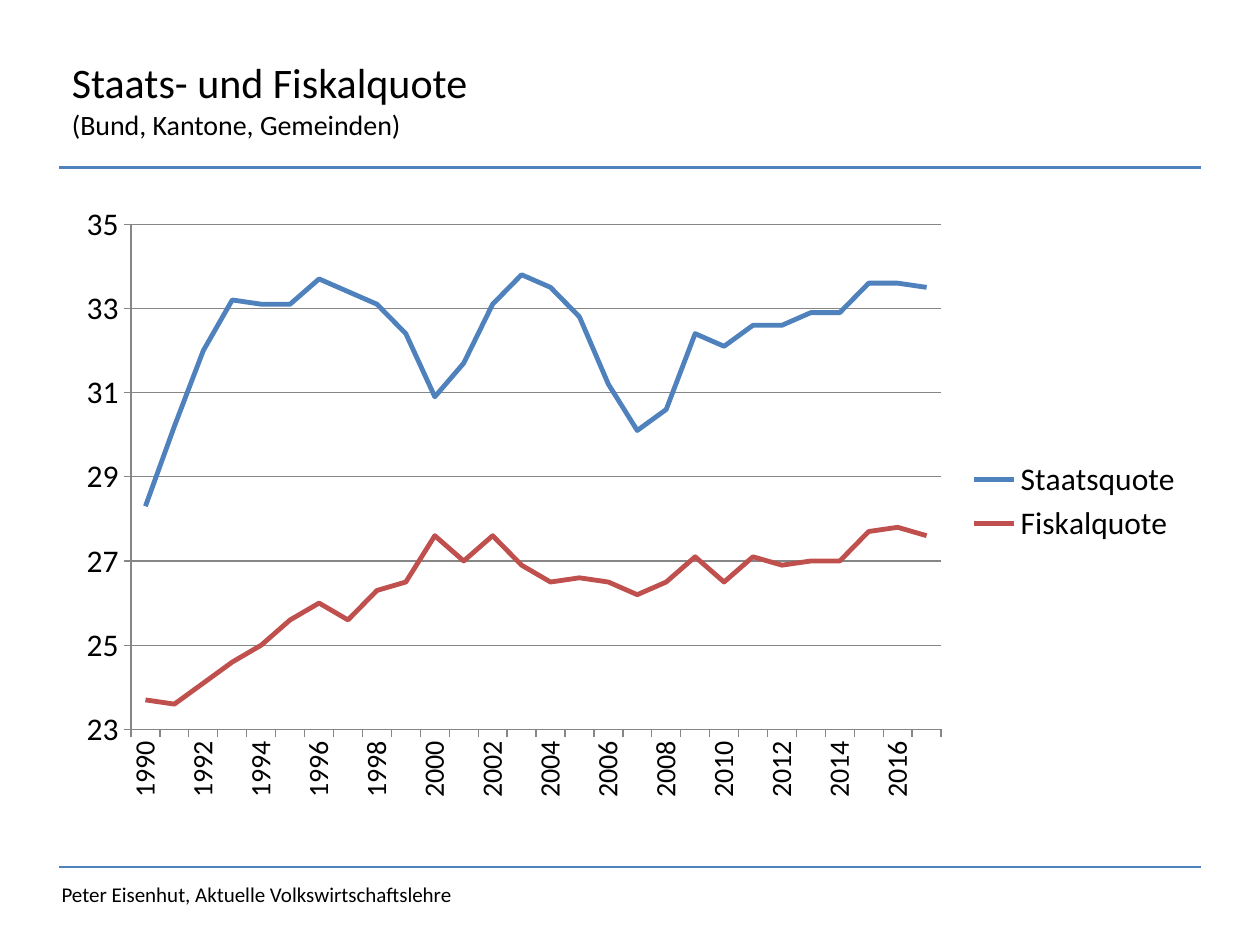
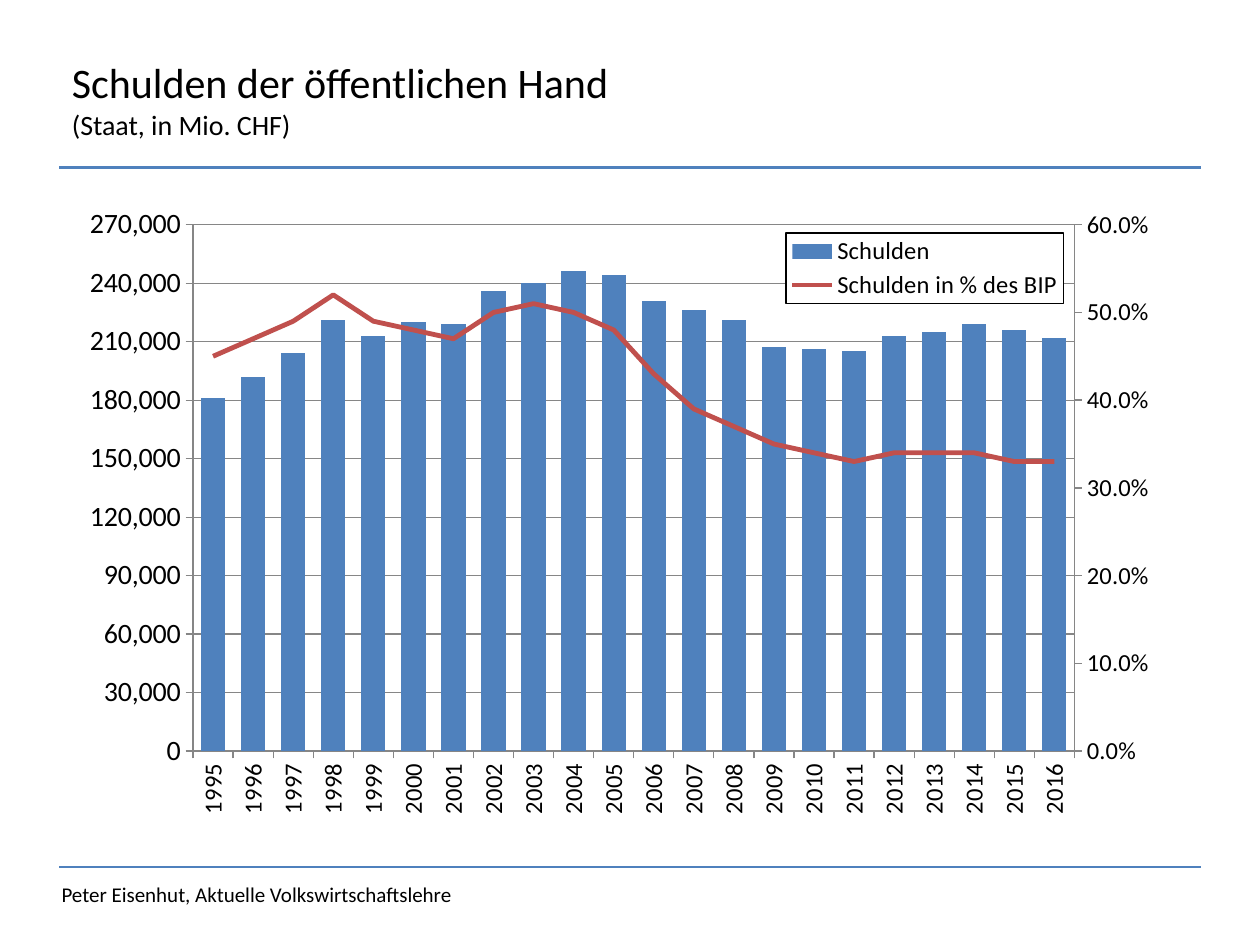
from dataclasses import dataclass
from typing import NamedTuple, Optional

from lxml import etree
from pptx import Presentation
from pptx.chart.axis import ValueAxis
from pptx.chart.data import CategoryChartData
from pptx.dml.color import RGBColor
from pptx.enum.chart import (XL_CHART_TYPE, XL_LEGEND_POSITION, XL_MARKER_STYLE,
                             XL_TICK_LABEL_POSITION, XL_TICK_MARK)
from pptx.enum.shapes import MSO_CONNECTOR
from pptx.enum.text import MSO_ANCHOR, MSO_AUTO_SIZE, PP_ALIGN
from pptx.oxml import parse_xml
from pptx.oxml.ns import nsdecls, qn
from pptx.util import Inches, Pt

LINE, COLUMN = XL_CHART_TYPE.LINE, XL_CHART_TYPE.COLUMN_CLUSTERED
RIGHT = XL_LEGEND_POSITION.RIGHT
NO_MARK = XL_MARKER_STYLE.NONE
LOW = XL_TICK_LABEL_POSITION.LOW
OUT, NO_TICK = XL_TICK_MARK.OUTSIDE, XL_TICK_MARK.NONE
STRAIGHT = MSO_CONNECTOR.STRAIGHT
MIDDLE, NO_FIT, LEFT = MSO_ANCHOR.MIDDLE, MSO_AUTO_SIZE.NONE, PP_ALIGN.LEFT

# The grid: 100 columns by 75 rows of square cells
COLS, ROWS = 100, 75
CELL = Inches(0.1)
TITLE_ONLY = 5


class Box(NamedTuple):
    """Left, top, width and height in grid cells."""
    x: float
    y: float
    w: float
    h: float

    def place(self) -> list[int]:
        return [round(side * CELL) for side in self]

    def share(self, whole: "Box") -> "Box":
        return Box((self.x - whole.x) / whole.w, (self.y - whole.y) / whole.h,
                   self.w / whole.w, self.h / whole.h)


@dataclass(frozen=True)
class Theme:
    font: str = "Calibri"
    ink: RGBColor = RGBColor(0, 0, 0)
    blue: RGBColor = RGBColor(0x4F, 0x81, 0xBD)
    red: RGBColor = RGBColor(0xC0, 0x50, 0x4D)
    grey: RGBColor = RGBColor(0x86, 0x86, 0x86)
    head: float = 24
    sub: float = 16
    foot: float = 12
    label: float = 18
    rule: float = 1.25
    curve: float = 2.75
    hair: float = 0.75


THEME = Theme()

# Frame parts on every slide
FOOTER = "Peter Eisenhut, Aktuelle Volkswirtschaftslehre"
TITLE_BOX = Box(4.7, 1.6, 78.9, 12.5)
FOOT_BOX = Box(3.9, 69.5, 60.2, 3)
RULE_ROWS = (13.3, 68.8)
RULE_EDGE = 4.7


class Scale(NamedTuple):
    """Range, step, number format and type size of a value axis."""
    low: float
    high: float
    step: float
    form: str
    size: float


class Curve(NamedTuple):
    name: str
    values: list[float]
    form: str


@dataclass(frozen=True)
class Page:
    title: str
    sub: str
    kind: int
    box: Box
    plot: Box
    start: int
    curves: list[Curve]
    left: Scale
    years: float
    right: Optional[Scale] = None
    legend: Optional[Box] = None
    key: float = THEME.label


PAGES = [
    Page("Staats- und Fiskalquote", "(Bund, Kantone, Gemeinden)", LINE,
         Box(5.1, 15.3, 89.8, 49), Box(10.4, 17.8, 64.3, 40.1), 1990,
         [Curve("Staatsquote",
                [28.3, 30.2, 32, 33.2, 33.1, 33.1, 33.7, 33.4, 33.1, 32.4,
                 30.9, 31.7, 33.1, 33.8, 33.5, 32.8, 31.2, 30.1, 30.6, 32.4,
                 32.1, 32.6, 32.6, 32.9, 32.9, 33.6, 33.6, 33.5], "0.0"),
          Curve("Fiskalquote",
                [23.7, 23.6, 24.1, 24.6, 25, 25.6, 26, 25.6, 26.3, 26.5,
                 27.6, 27, 27.6, 26.9, 26.5, 26.6, 26.5, 26.2, 26.5, 27.1,
                 26.5, 27.1, 26.9, 27, 27, 27.7, 27.8, 27.6], "0.0")],
         Scale(23, 35, 2, "#,##0", 18), 16),
    Page("Schulden der öffentlichen Hand", "(Staat, in Mio. CHF)", COLUMN,
         Box(5.1, 16.2, 89, 51.2), Box(15.33, 17.84, 69.95, 41.78), 1995,
         [Curve("Schulden",
                [1000 * debt for debt in
                 (181, 192, 204, 221, 213, 220, 219, 236, 240, 246, 244,
                  231, 226, 221, 207, 206, 205, 213, 215, 219, 216, 212)],
                "#,##0"),
          Curve("Schulden in % des BIP",
                [0.45, 0.47, 0.49, 0.52, 0.49, 0.48, 0.47, 0.5, 0.51, 0.5,
                 0.48, 0.43, 0.39, 0.37, 0.35, 0.34, 0.33, 0.34, 0.34, 0.34,
                 0.33, 0.33], "0.0%")],
         Scale(0, 270000, 30000, "#,##0", 16), 14,
         Scale(0, 0.6, 0.1, "0.0%", 14), Box(62.4, 18.5, 22, 5.6), 14),
]


# Text and frame
def style_font(font, size: float) -> None:
    font.name, font.size = THEME.font, Pt(size)
    font.color.rgb = THEME.ink


def add_run(para, text: str, size: float) -> None:
    run = para.add_run()
    run.text = text
    style_font(run.font, size)


def add_rule(slide, row: float) -> None:
    ends = [round(n * CELL) for n in (RULE_EDGE, row, COLS - RULE_EDGE, row)]
    rule = slide.shapes.add_connector(STRAIGHT, *ends)
    rule.line.color.rgb, rule.line.width = THEME.blue, Pt(THEME.rule)
    etree.SubElement(rule.element.spPr, qn("a:effectLst"))


def add_frame(slide, page: Page) -> None:
    for row in RULE_ROWS:
        add_rule(slide, row)
    foot = slide.shapes.add_textbox(*FOOT_BOX.place()).text_frame
    foot.word_wrap = True
    add_run(foot.paragraphs[0], FOOTER, THEME.foot)

    title = slide.shapes.title
    title.left, title.top, title.width, title.height = TITLE_BOX.place()
    frame = title.text_frame
    frame.vertical_anchor, frame.auto_size = MIDDLE, NO_FIT
    para = frame.paragraphs[0]
    para.alignment = LEFT
    add_run(para, page.title, THEME.head)
    para.add_line_break()
    add_run(para, page.sub, THEME.sub)


# Chart parts
def set_layout(host, spot: int, share: Box, inner: bool) -> None:
    for old in host.findall(qn("c:layout")):
        host.remove(old)
    target = '<c:layoutTarget val="inner"/>' if inner else ""
    modes = "".join(f'<c:{side}Mode val="edge"/>' for side in "xy")
    sides = "".join(f'<c:{side} val="{size:.4f}"/>'
                    for side, size in zip("xywh", share))
    host.insert(spot, parse_xml(
        f'<c:layout {nsdecls("c")}><c:manualLayout>{target}{modes}{sides}'
        '</c:manualLayout></c:layout>'))


def style_axis(axis, size: float) -> None:
    axis.major_tick_mark, axis.minor_tick_mark = OUT, NO_TICK
    style_font(axis.tick_labels.font, size)
    line = axis.format.line
    line.color.rgb, line.width = THEME.grey, Pt(THEME.hair)


def set_scale(axis, scale: Scale) -> None:
    style_axis(axis, scale.size)
    axis.minimum_scale, axis.maximum_scale = scale.low, scale.high
    axis.major_unit = scale.step
    labels = axis.tick_labels
    labels.number_format, labels.number_format_is_linked = scale.form, False


def add_right(chart, scale: Scale) -> None:
    """Move the last series to a line plot on an axis at the right."""
    area = chart.element.find(".//" + qn("c:plotArea"))
    bars = area.find(qn("c:barChart"))
    last = bars.findall(qn("c:ser"))[-1]
    for flag in last.findall(qn("c:invertIfNegative")):
        last.remove(flag)
    lines = parse_xml(
        f'<c:lineChart {nsdecls("c")}><c:grouping val="standard"/>'
        '<c:varyColors val="0"/><c:marker val="1"/>'
        '<c:axId val="501"/><c:axId val="502"/></c:lineChart>')
    lines.insert(2, last)
    bars.addnext(lines)

    spot = area.findall(qn("c:valAx"))[-1]
    parts = (("valAx", 502, 501, 0, "r", "max"), ("catAx", 501, 502, 1, "b", "autoZero"))
    for tag, own, cross, gone, side, meet in parts:
        spot.addnext(parse_xml(
            f'<c:{tag} {nsdecls("c")}><c:axId val="{own}"/><c:scaling>'
            f'<c:orientation val="minMax"/></c:scaling><c:delete val="{gone}"/>'
            f'<c:axPos val="{side}"/><c:tickLblPos val="nextTo"/>'
            f'<c:crossAx val="{cross}"/><c:crosses val="{meet}"/></c:{tag}>'))
    set_scale(ValueAxis(area.findall(qn("c:valAx"))[-1]), scale)


def add_legend(chart, page: Page) -> None:
    chart.has_legend = True
    legend = chart.legend
    legend.position, legend.include_in_layout = RIGHT, False
    style_font(legend.font, page.key)
    if page.legend is None:
        return
    node = chart.element.find(".//" + qn("c:legend"))
    set_layout(node, 1, page.legend.share(page.box), False)
    node.find(qn("c:txPr")).addprevious(parse_xml(
        f'<c:spPr {nsdecls("c", "a")}><a:solidFill><a:srgbClr val="FFFFFF"/>'
        f'</a:solidFill><a:ln w="{Pt(THEME.hair)}"><a:solidFill>'
        f'<a:srgbClr val="{THEME.ink}"/></a:solidFill></a:ln></c:spPr>'))


def paint_plots(chart) -> None:
    hues = [THEME.blue, THEME.red]
    for plot in chart.plots:
        plot.vary_by_categories = False
        for item in plot.series:
            hue = hues.pop(0)
            if hasattr(item, "smooth"):
                item.smooth, item.marker.style = False, NO_MARK
                line = item.format.line
                line.color.rgb, line.width = hue, Pt(THEME.curve)
            else:
                plot.gap_width = 65
                item.format.fill.solid()
                item.format.fill.fore_color.rgb = hue


def add_graph(slide, page: Page) -> None:
    data = CategoryChartData()
    count = len(page.curves[0].values)
    data.categories = [str(page.start + n) for n in range(count)]
    for curve in page.curves:
        data.add_series(curve.name, curve.values, number_format=curve.form)
    chart = slide.shapes.add_chart(page.kind, *page.box.place(), data).chart
    chart.has_title = False
    style_font(chart.font, THEME.label)

    # Axes and grid
    years, left = chart.category_axis, chart.value_axis
    style_axis(years, page.years)
    years.tick_label_position = LOW
    turn = chart.element.find(f".//{qn('c:catAx')}/{qn('c:txPr')}/{qn('a:bodyPr')}")
    turn.set("rot", "-5400000")
    turn.set("vert", "horz")
    set_scale(left, page.left)
    left.has_major_gridlines = True
    grid = left.major_gridlines.format.line
    grid.color.rgb, grid.width = THEME.grey, Pt(THEME.hair)

    if page.right:
        add_right(chart, page.right)
    paint_plots(chart)
    add_legend(chart, page)
    area = chart.element.find(".//" + qn("c:plotArea"))
    set_layout(area, 0, page.plot.share(page.box), True)


def main() -> None:
    deck = Presentation()
    deck.slide_width, deck.slide_height = COLS * CELL, ROWS * CELL
    for page in PAGES:
        slide = deck.slides.add_slide(deck.slide_layouts[TITLE_ONLY])
        add_frame(slide, page)
        add_graph(slide, page)
    deck.save("out.pptx")


if __name__ == "__main__":
    main()
